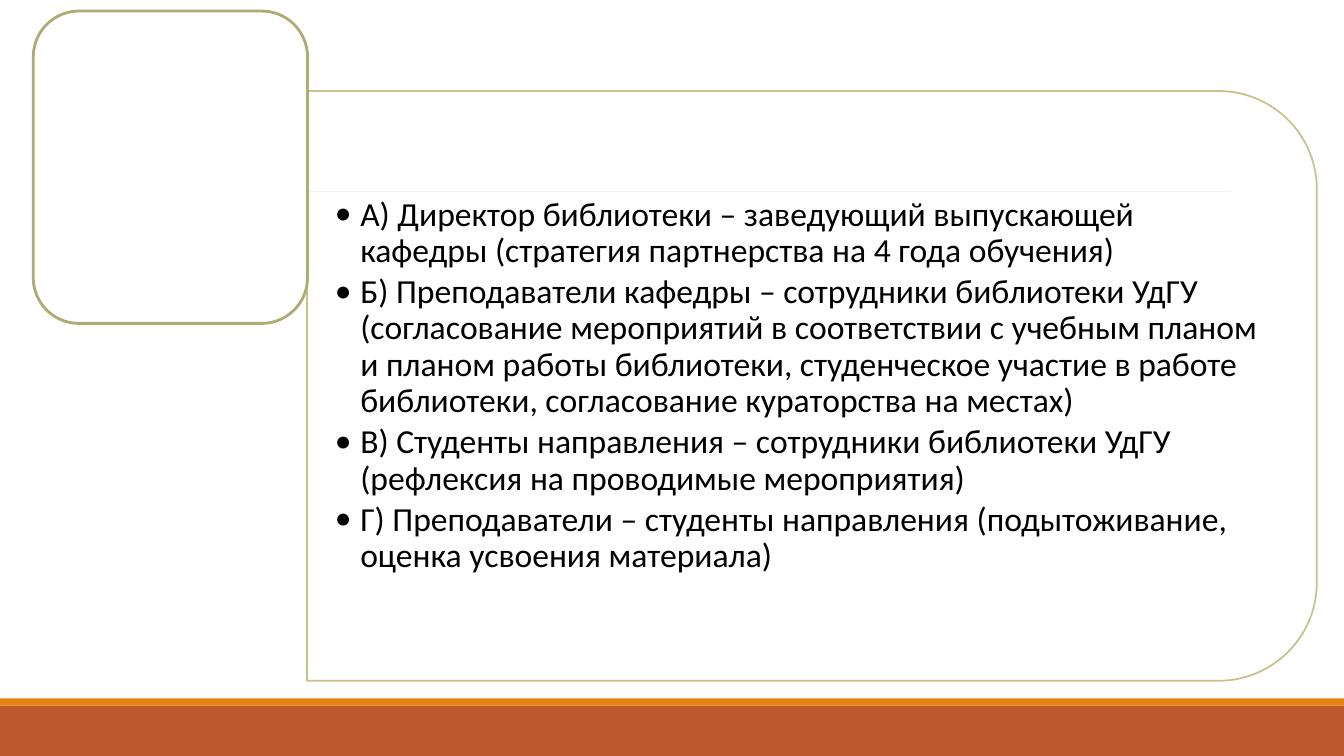
from dataclasses import dataclass

from lxml.etree import SubElement
from pptx import Presentation
from pptx.dml.color import RGBColor
from pptx.enum.shapes import MSO_CONNECTOR as Connector, MSO_SHAPE as Shape
from pptx.enum.text import MSO_ANCHOR as Anchor
from pptx.oxml.ns import qn
from pptx.util import Cm, Pt


@dataclass(frozen=True)
class Theme:
    white: str = "FFFFFF"
    text: str = "000000"
    band: str = "BD582C"
    strip: str = "E48312"
    rule: str = "808080"
    panel_line: str = "C2BC80"
    card_line: str = "B0AB74"
    font: str = "Calibri"
    body_size: int = 24


THEME = Theme()

PARTNERSHIPS = [
    "А) Директор библиотеки – заведующий выпускающей кафедры (стратегия партнерства на 4 года обучения)",
    "Б) Преподаватели кафедры – сотрудники библиотеки УдГУ (согласование мероприятий в соответствии с "
    "учебным планом и планом работы библиотеки, студенческое участие в работе библиотеки, "
    "согласование кураторства на местах)",
    "В) Студенты направления – сотрудники библиотеки УдГУ (рефлексия на проводимые мероприятия)",
    "Г) Преподаватели – студенты направления (подытоживание, оценка усвоения материала)",
]


def set_opacity(element, percent):
    for color in element.iter(qn("a:srgbClr")):
        SubElement(color, qn("a:alpha"), val=str(percent * 1000))


def add_block(page, kind, left, top, width, height, fill, line=None, line_width=0):
    block = page.shapes.add_shape(kind, Cm(left), Cm(top), Cm(width), Cm(height))
    block.shadow.inherit = False
    block.fill.solid()
    block.fill.fore_color.rgb = RGBColor.from_string(fill)
    if line:
        block.line.color.rgb = RGBColor.from_string(line)
        block.line.width = Pt(line_width)
    else:
        block.line.fill.background()
    return block


def add_rule(page, left, right, top):
    rule = page.shapes.add_connector(Connector.STRAIGHT, Cm(left), Cm(top), Cm(right), Cm(top))
    rule.line.color.rgb = RGBColor.from_string(THEME.rule)
    rule.line.width = Pt(0.5)
    SubElement(rule.element.spPr, qn("a:effectLst"))


def add_bullet(paragraph):
    properties = paragraph._p.get_or_add_pPr()
    properties.set("marL", str(Cm(0.64)))
    properties.set("indent", str(Cm(-0.64)))
    SubElement(properties, qn("a:buFont"), typeface=THEME.font)
    SubElement(properties, qn("a:buChar"), char="•")


def add_bullet_list(page, left, top, width, height, items):
    box = page.shapes.add_textbox(Cm(left), Cm(top), Cm(width), Cm(height))
    frame = box.text_frame
    frame.word_wrap = True
    frame.vertical_anchor = Anchor.MIDDLE
    frame.margin_left = frame.margin_right = Cm(0.69)
    frame.margin_top = frame.margin_bottom = Cm(0.36)
    frame.text = "\n".join(items)
    for paragraph in frame.paragraphs:
        paragraph.line_spacing = 0.9
        paragraph.space_after = Pt(3.6)
        add_bullet(paragraph)
        paragraph.font.name = THEME.font
        paragraph.font.size = Pt(THEME.body_size)
        paragraph.font.color.rgb = RGBColor.from_string(THEME.text)


def main():
    deck = Presentation()
    deck.slide_width, deck.slide_height = Cm(33.87), Cm(19.05)
    page = deck.slides.add_slide(deck.slide_layouts[6])

    add_block(page, Shape.RECTANGLE, 0, 17.78, 33.87, 1.27, THEME.band)
    add_block(page, Shape.RECTANGLE, 0, 17.6, 33.87, 0.18, THEME.strip)
    add_rule(page, 3.33, 31.01, 4.83)

    panel = add_block(page, Shape.ROUND_2_SAME_RECTANGLE, 13.03, -3, 14.86, 25.45,
                      THEME.white, THEME.panel_line, 1.25)
    panel.rotation = 90
    set_opacity(panel.element.spPr, 90)

    add_bullet_list(page, 7.75, 3.02, 24.71, 13.41, PARTNERSHIPS)
    add_block(page, Shape.ROUNDED_RECTANGLE, 0.84, 0.28, 6.91, 7.87,
              THEME.white, THEME.card_line, 2)

    deck.save("out.pptx")


if __name__ == "__main__":
    main()
